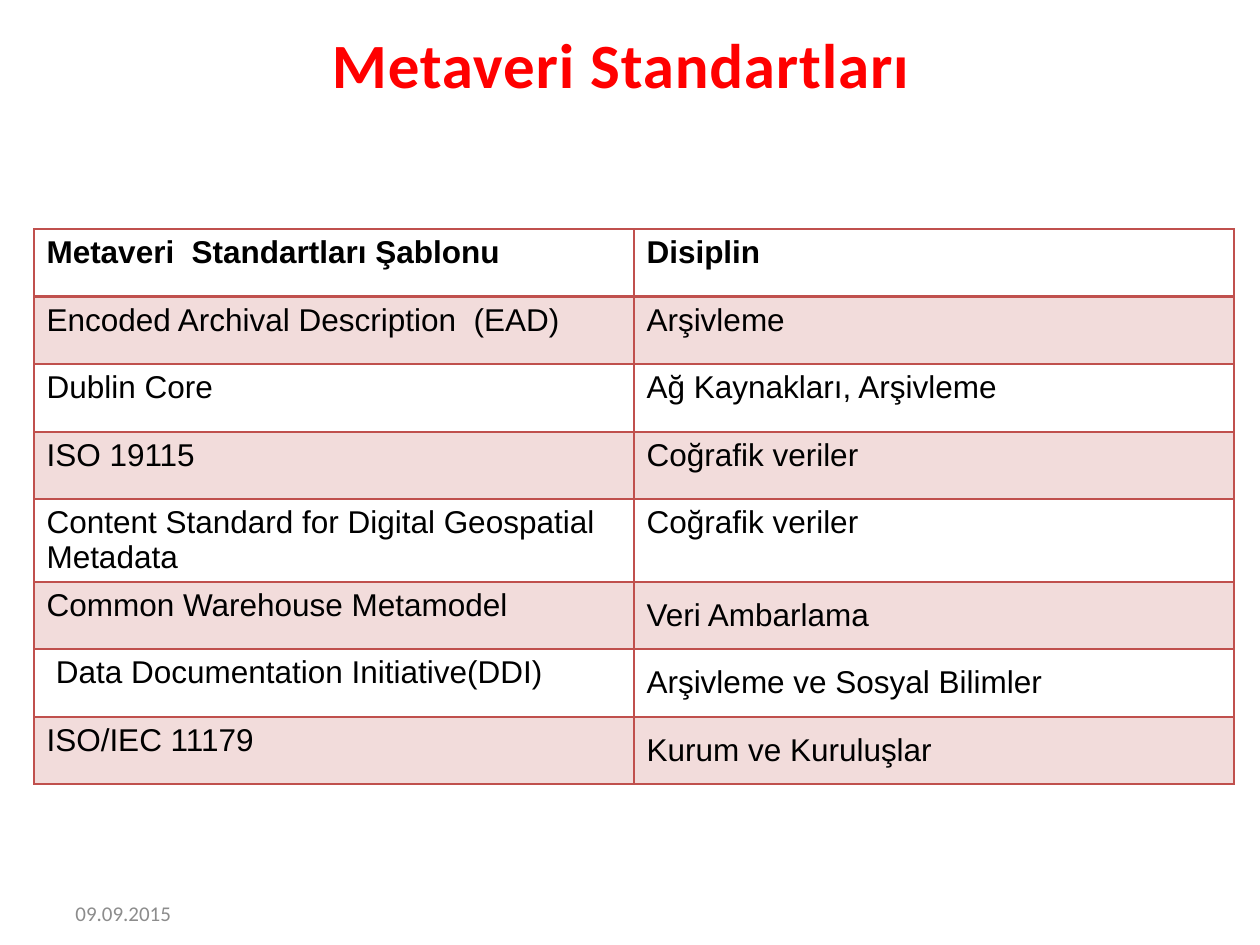
from lxml import etree
from pptx import Presentation
from pptx import util as u
from pptx.dml.color import RGBColor
from pptx.enum import text
from pptx.oxml.ns import qn

PX_PER_INCH = 126
BLACK = RGBColor(0x00, 0x00, 0x00)
RED = RGBColor(0xFF, 0x00, 0x00)
BRICK = RGBColor(0xC0, 0x50, 0x4D)
GREY = RGBColor(0x8C, 0x8C, 0x8C)

TOP = text.MSO_ANCHOR.TOP
MIDDLE = text.MSO_ANCHOR.MIDDLE
HEADER = ("Metaveri  Standartları Şablonu", "Disiplin")
STANDARDS = [
    ("Encoded Archival Description  (EAD)", "Arşivleme"),
    ("Dublin Core", "Ağ Kaynakları, Arşivleme"),
    ("ISO 19115", "Coğrafik veriler"),
    ("Content Standard for Digital Geospatial Metadata", "Coğrafik veriler"),
    ("Common Warehouse Metamodel", "Veri Ambarlama"),
    ("Data Documentation Initiative(DDI)", "Arşivleme ve Sosyal Bilimler"),
    ("ISO/IEC 11179", "Kurum ve Kuruluşlar"),
]
TALL_ROW = 4
FIRST_CENTRED_ROW = 5
INDENTED_ROW = 6


def px(length):
    return u.Emu(round(length * 914400 / PX_PER_INCH))


def place(shape, left, top, width, height):
    shape.left, shape.top = px(left), px(top)
    shape.width, shape.height = px(width), px(height)


def write(frame, words, font="Arial", size=18, color=BLACK, bold=False,
          align=text.PP_ALIGN.LEFT, spacing=None):
    frame.word_wrap = True
    para = frame.paragraphs[0]
    para.alignment = align
    span = para.add_run()
    span.text = words
    span.font.name = font
    span.font.size = u.Pt(size)
    span.font.bold = bold
    span.font.color.rgb = color
    if spacing is not None:
        span.font._element.set("spc", str(round(spacing * 100)))


def add_border(cell, side, points):
    line = etree.SubElement(cell._tc.get_or_add_tcPr(), qn(f"a:ln{side}"),
                            w=str(u.Pt(points)))
    fill = etree.SubElement(line, qn("a:solidFill"))
    etree.SubElement(fill, qn("a:srgbClr"), val=str(BRICK))


def tint(cell, percent):
    cell.fill.solid()
    cell.fill.fore_color.rgb = BRICK
    color = cell._tc.tcPr.find(f"{qn('a:solidFill')}/{qn('a:srgbClr')}")
    etree.SubElement(color, qn("a:alpha"), val=str(percent * 1000))


def format_cell(cell, row, column):
    for side in "LRTB":
        heavy = (row, side) in ((0, "B"), (1, "T"))
        add_border(cell, side, 2 if heavy else 1)
    if row % 2:
        tint(cell, 20)
    else:
        cell.fill.background()
    centred = column == 1 and row >= FIRST_CENTRED_ROW
    cell.vertical_anchor = MIDDLE if centred else TOP
    if column == 0 and row == INDENTED_ROW:
        cell.margin_left = px(22)


def add_standards_table(page):
    rows = [HEADER, *STANDARDS]
    table = page.shapes.add_table(len(rows), len(HEADER), px(34), px(229),
                                  px(1200), px(556)).table
    table.horz_banding = False
    for column in table.columns:
        column.width = px(600)
    for row, entries in enumerate(rows):
        table.rows[row].height = px(83 if row == TALL_ROW else 68 - row % 2)
        for column, words in enumerate(entries):
            cell = table.cell(row, column)
            format_cell(cell, row, column)
            write(cell.text_frame, words, bold=row == 0)


def add_title(page, words):
    title = page.shapes.title
    place(title, 134, 19, 974, 110)
    title.text_frame.vertical_anchor = TOP
    write(title.text_frame, words, font="Calibri", size=36, color=RED,
          bold=True, align=text.PP_ALIGN.CENTER, spacing=0.5)


def add_date(page, words):
    box = page.shapes.add_textbox(px(63), px(888), px(294), px(50))
    box.text_frame.vertical_anchor = MIDDLE
    write(box.text_frame, words, font="Calibri", size=12, color=GREY)


def main():
    deck = Presentation()
    deck.slide_width, deck.slide_height = px(1260), px(945)
    page = deck.slides.add_slide(deck.slide_layouts[5])
    add_standards_table(page)
    add_date(page, "09.09.2015")
    add_title(page, "Metaveri Standartları")
    deck.save("out.pptx")


if __name__ == "__main__":
    main()
